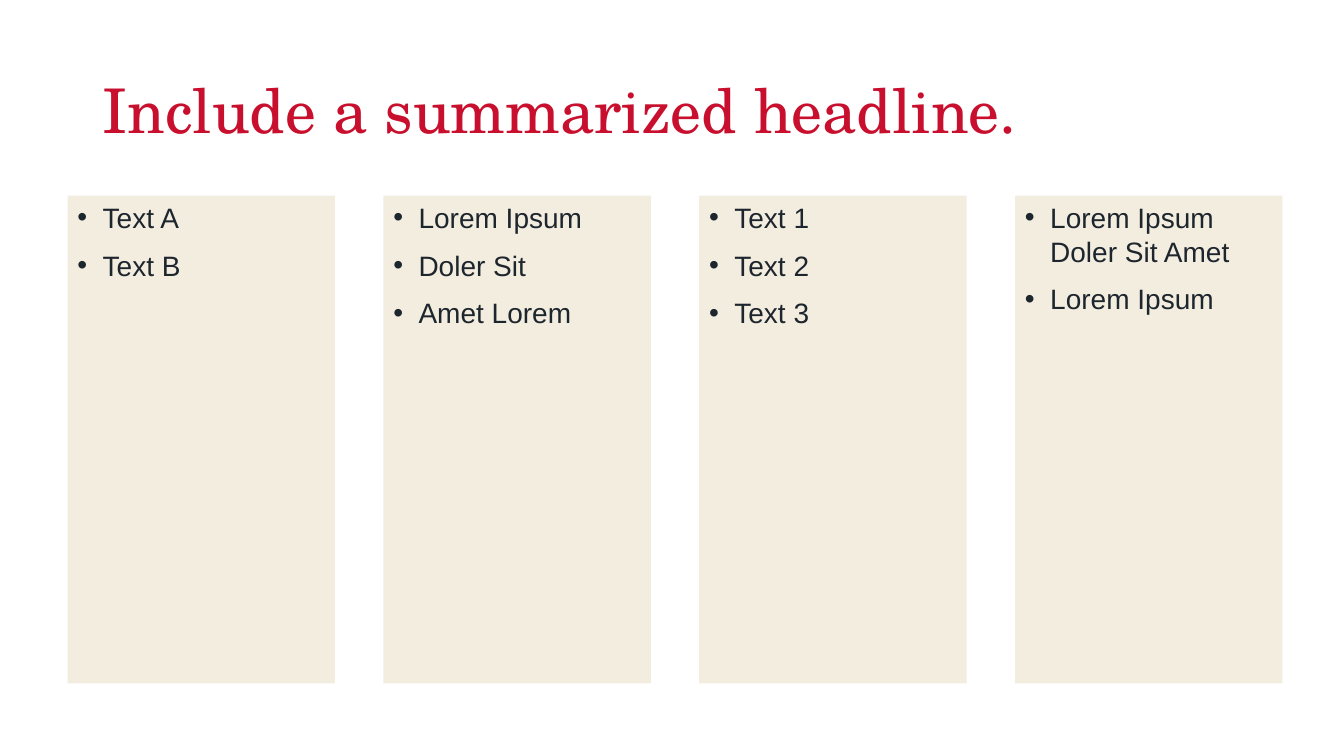
from lxml.etree import SubElement
from pptx import Presentation
from pptx.dml.color import RGBColor
from pptx.enum.shapes import MSO_SHAPE
from pptx.enum.text import MSO_ANCHOR, PP_ALIGN
from pptx.oxml.ns import qn
from pptx.util import Inches, Pt

RED, INK, SAND = "C8102E", "1D252D", "F3EDE0"
COLUMNS = [
    ["Text A", "Text B"],
    ["Lorem Ipsum", "Doler Sit", "Amet Lorem"],
    ["Text 1", "Text 2", "Text 3"],
    ["Lorem Ipsum Doler Sit Amet", "Lorem Ipsum"],
]


def color(value):
    return RGBColor.from_string(value)


def write(para, text, font, size, fill, line_spacing=1.0, space_before=0, bullet=False):
    para.alignment = PP_ALIGN.LEFT
    para.line_spacing = line_spacing
    para.space_before = Pt(space_before)
    span = para.add_run()
    span.text = text
    span.font.name = font
    span.font.size = Pt(size)
    span.font.color.rgb = color(fill)
    if bullet:
        properties = para._p.get_or_add_pPr()
        properties.set("marL", str(Inches(0.25)))
        properties.set("indent", str(Inches(-0.25)))
        SubElement(properties, qn("a:buFont"), typeface="Arial")
        SubElement(properties, qn("a:buChar"), char="•")


def add_headline(page, text, left, top, width, height):
    title = page.shapes.title
    title.left, title.top = Inches(left), Inches(top)
    title.width, title.height = Inches(width), Inches(height)
    frame = title.text_frame
    frame.word_wrap = True
    frame.vertical_anchor = MSO_ANCHOR.MIDDLE
    write(frame.paragraphs[0], text, "TeX Gyre Schola", 44, RED, line_spacing=0.9)


def add_bullet_panel(page, items, left, top, width, height):
    panel = page.shapes.add_shape(
        MSO_SHAPE.RECTANGLE, Inches(left), Inches(top), Inches(width), Inches(height))
    panel.shadow.inherit = False
    panel.fill.solid()
    panel.fill.fore_color.rgb = color(SAND)
    panel.line.fill.background()
    frame = panel.text_frame
    frame.word_wrap = True
    frame.vertical_anchor = MSO_ANCHOR.TOP
    for index, item in enumerate(items):
        para = frame.add_paragraph() if index else frame.paragraphs[0]
        write(para, item, "Arial", 20, INK, space_before=10, bullet=True)


def add_columns(page, columns, left, top, width, height, gap):
    """Share the width equally among the panels, with a fixed gap between them."""
    panel_width = (width - gap * (len(columns) - 1)) / len(columns)
    for index, items in enumerate(columns):
        panel_left = left + index * (panel_width + gap)
        add_bullet_panel(page, items, panel_left, top, panel_width, height)


def main():
    deck = Presentation()
    deck.slide_width, deck.slide_height = Inches(13.33), Inches(7.5)
    page = deck.slides.add_slide(deck.slide_layouts[5])
    add_headline(page, "Include a summarized headline.", 0.92, 0.4, 11.5, 1.45)
    add_columns(page, COLUMNS, 0.67, 1.94, 12.05, 4.84, gap=0.48)
    deck.save("out.pptx")


if __name__ == "__main__":
    main()
